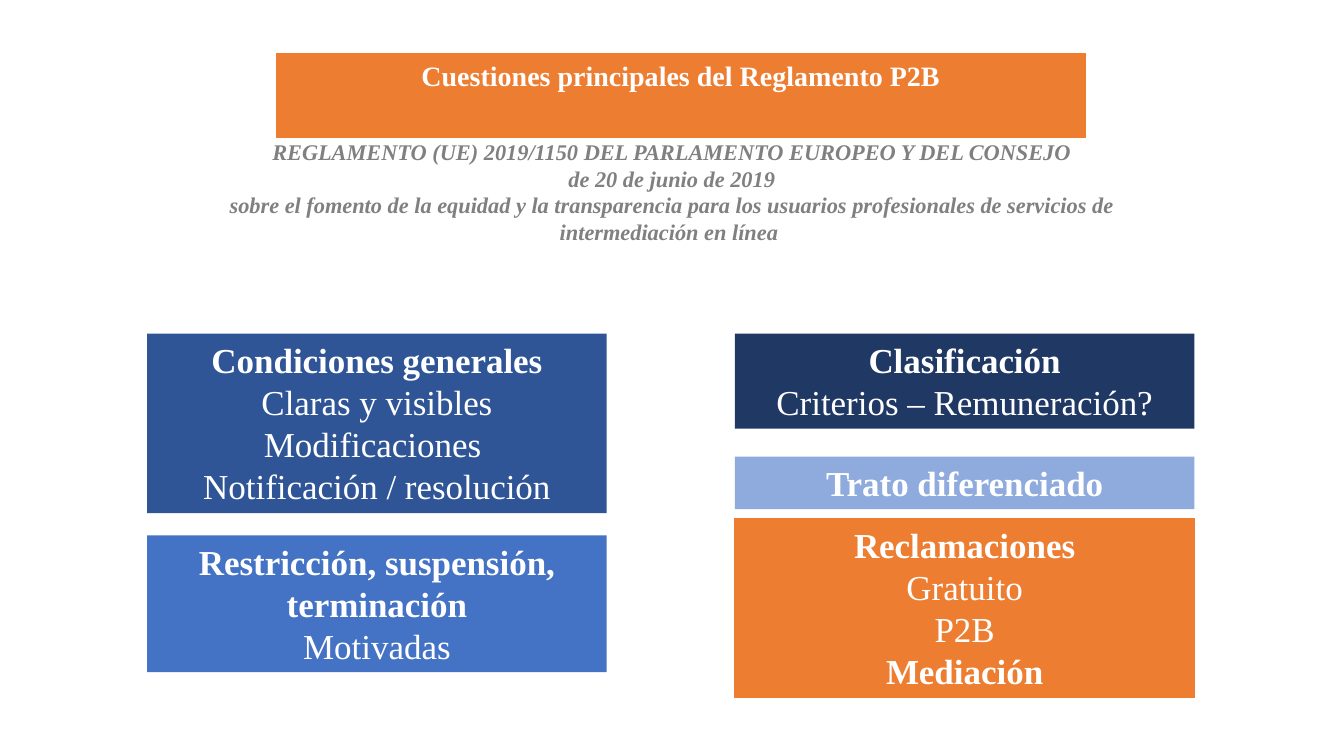
from dataclasses import dataclass

import pptx
import pptx.dml.color
import pptx.enum.shapes
import pptx.enum.text
import pptx.shapes.autoshape
import pptx.slide
import pptx.util

COLOURS: dict[str, str] = {
    "white": "FFFFFF",
    "grey": "808080",
    "orange": "ED7D31",
    "navy": "203864",
    "dark blue": "2F5597",
    "blue": "4472C4",
    "light blue": "8FAADC",
}
FONT = "Times New Roman"
LEFT_COLUMN = 3.71
RIGHT_COLUMN = 18.52
TOPIC_WIDTH = 11.58


@dataclass(frozen=True)
class Line:
    text: str
    bold: bool = False
    italic: bool = False


@dataclass(frozen=True)
class Topic:
    left: float
    top: float
    height: float
    fill: str
    lines: tuple[Line, ...]
    outlined: bool = False


TOPICS = (
    Topic(LEFT_COLUMN, 8.41, 4.52, "dark blue", (
        Line("Condiciones generales", bold=True),
        Line("Claras y visibles"),
        Line("Modificaciones "),
        Line("Notificación / resolución"),
    )),
    Topic(RIGHT_COLUMN, 8.41, 2.39, "navy", (
        Line("Clasificación", bold=True),
        Line("Criterios – Remuneración?"),
    )),
    Topic(LEFT_COLUMN, 13.49, 3.45, "blue", (
        Line("Restricción, suspensión, terminación", bold=True),
        Line("Motivadas"),
    )),
    Topic(RIGHT_COLUMN, 11.51, 1.32, "light blue", (
        Line("Trato diferenciado", bold=True),
    )),
    Topic(RIGHT_COLUMN, 13.06, 4.52, "orange", (
        Line("Reclamaciones", bold=True),
        Line("Gratuito"),
        Line("P2B"),
        Line("Mediación", bold=True),
    ), outlined=True),
)

HEADING = (Line("Cuestiones principales del Reglamento P2B", bold=True),)
REGULATION = tuple(Line(text, bold=True, italic=True) for text in (
    "REGLAMENTO (UE) 2019/1150 DEL PARLAMENTO EUROPEO Y DEL CONSEJO",
    "de 20 de junio de 2019",
    "sobre el fomento de la equidad y la transparencia para los usuarios "
    "profesionales de servicios de intermediación en línea ",
))


def rgb(colour: str) -> pptx.dml.color.RGBColor:
    return pptx.dml.color.RGBColor.from_string(COLOURS[colour])


def write_lines(
    shape: pptx.shapes.autoshape.Shape,
    lines: tuple[Line, ...],
    size: float,
    colour: str,
) -> None:
    frame = shape.text_frame
    frame.word_wrap = True
    frame.auto_size = pptx.enum.text.MSO_AUTO_SIZE.SHAPE_TO_FIT_TEXT
    frame.vertical_anchor = pptx.enum.text.MSO_ANCHOR.TOP
    for index, line in enumerate(lines):
        paragraph = frame.add_paragraph() if index else frame.paragraphs[0]
        paragraph.alignment = pptx.enum.text.PP_ALIGN.CENTER
        paragraph.line_spacing = 1.0
        run = paragraph.add_run()
        run.text = line.text
        run.font.name = FONT
        run.font.size = pptx.util.Pt(size)
        run.font.bold = line.bold
        run.font.italic = line.italic
        run.font.color.rgb = rgb(colour)


def paint(shape: pptx.shapes.autoshape.Shape, fill: str, outlined: bool) -> None:
    shape.fill.solid()
    shape.fill.fore_color.rgb = rgb(fill)
    if outlined:
        shape.line.color.rgb = rgb(fill)
        shape.line.width = pptx.util.Pt(0.75)
    else:
        shape.line.fill.background()


def draw_heading(slide: pptx.slide.Slide) -> None:
    heading = slide.shapes.title
    heading.left, heading.top = pptx.util.Cm(6.96), pptx.util.Cm(1.35)
    heading.width, heading.height = pptx.util.Cm(20.4), pptx.util.Cm(1.12)
    paint(heading, "orange", outlined=True)
    write_lines(heading, HEADING, 20, "white")


def draw_regulation(slide: pptx.slide.Slide) -> None:
    regulation = slide.shapes.add_textbox(
        pptx.util.Cm(5.46), pptx.util.Cm(3.35),
        pptx.util.Cm(22.94), pptx.util.Cm(3.84),
    )
    write_lines(regulation, REGULATION, 16, "grey")


def draw_topic(slide: pptx.slide.Slide, topic: Topic) -> None:
    box = slide.shapes.add_shape(
        pptx.enum.shapes.MSO_SHAPE.RECTANGLE,
        pptx.util.Cm(topic.left), pptx.util.Cm(topic.top),
        pptx.util.Cm(TOPIC_WIDTH), pptx.util.Cm(topic.height),
    )
    box.shadow.inherit = False
    paint(box, topic.fill, topic.outlined)
    write_lines(box, topic.lines, 25, "white")


def main() -> None:
    presentation = pptx.Presentation()
    presentation.slide_width = pptx.util.Cm(33.87)
    presentation.slide_height = pptx.util.Cm(19.05)
    title_only = presentation.slide_layouts.get_by_name("Title Only")
    slide = presentation.slides.add_slide(title_only)
    draw_heading(slide)
    draw_regulation(slide)
    for topic in TOPICS:
        draw_topic(slide, topic)
    presentation.save("out.pptx")


if __name__ == "__main__":
    main()
